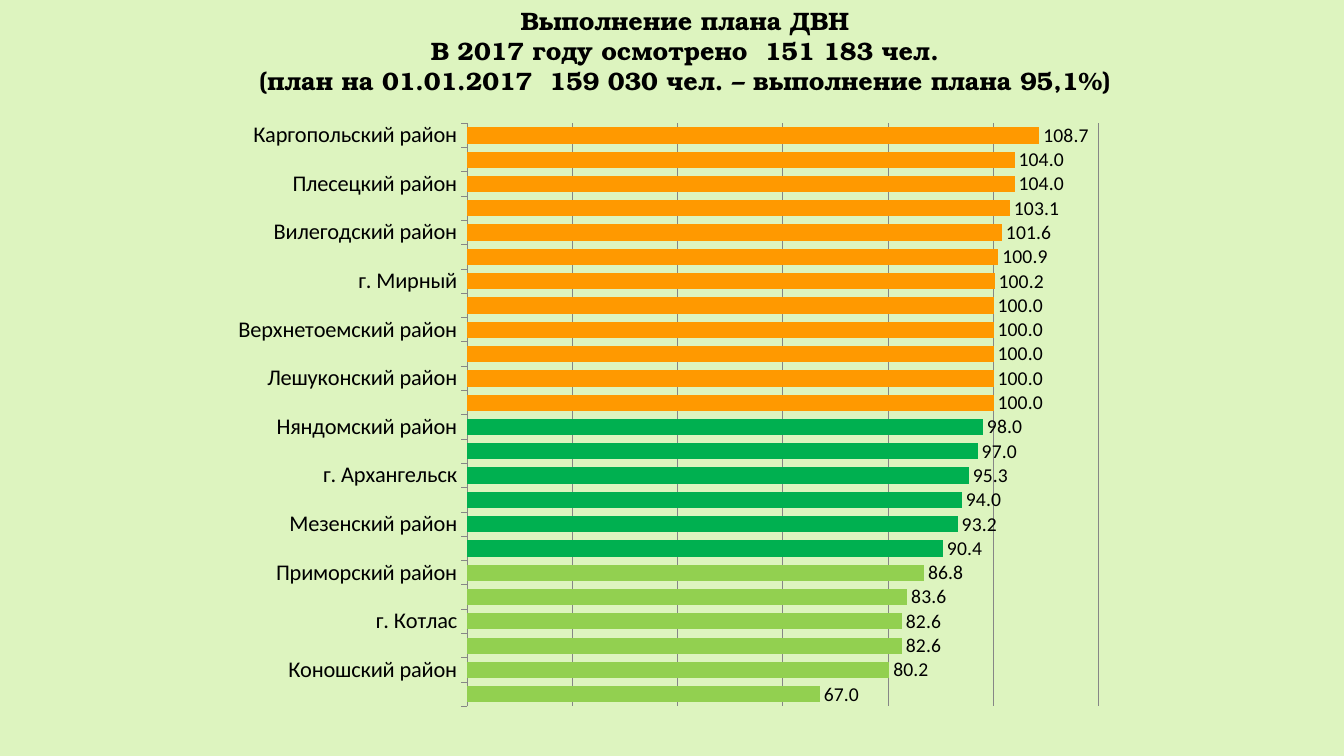
from dataclasses import dataclass

from lxml import etree
from pptx import Presentation
from pptx import util as u
from pptx.chart.data import CategoryChartData
from pptx.dml.color import RGBColor
from pptx.enum import chart as ch
from pptx.enum import text

COLORS = {
    "background": "DDF4BF",
    "text": "000000",
    "axis": "868686",
    "achieved": "FF9900",
    "close": "00B050",
    "behind": "92D050",
}
HEADING_FONT = "TeX Gyre Bonum"
CHART_FONT = "Calibri"
CHART_NS = "http://schemas.openxmlformats.org/drawingml/2006/chart"

HEADING = (
    "Выполнение плана ДВН",
    "В 2017 году осмотрено  151 183 чел.",
    "(план на 01.01.2017  159 030 чел. – выполнение плана 95,1%)",
)


@dataclass(frozen=True)
class District:
    percent: float
    name: str = ""

    @property
    def color(self) -> str:
        if self.percent >= 100:
            return COLORS["achieved"]
        return COLORS["close"] if self.percent >= 90 else COLORS["behind"]


DISTRICTS = [
    District(108.7, "Каргопольский район"),
    District(104),
    District(104, "Плесецкий район"),
    District(103.1),
    District(101.6, "Вилегодский район"),
    District(100.9),
    District(100.2, "г. Мирный"),
    District(100),
    District(100, "Верхнетоемский район"),
    District(100),
    District(100, "Лешуконский район"),
    District(100),
    District(98, "Няндомский район"),
    District(97),
    District(95.3, "г. Архангельск"),
    District(94),
    District(93.2, "Мезенский район"),
    District(90.4),
    District(86.8, "Приморский район"),
    District(83.6),
    District(82.6, "г. Котлас"),
    District(82.6),
    District(80.2, "Коношский район"),
    District(67),
]


def style_font(font, name: str, size: float, bold: bool = False) -> None:
    font.name = name
    font.size = u.Pt(size)
    font.bold = bold
    font.color.rgb = RGBColor.from_string(COLORS["text"])


def style_line(line) -> None:
    line.color.rgb = RGBColor.from_string(COLORS["axis"])
    line.width = u.Pt(0.75)


def place_plot(chart, x: float, y: float, w: float, h: float) -> None:
    plot_area = chart._chartSpace.find(f".//{{{CHART_NS}}}plotArea")
    for old_layout in plot_area.findall(f"{{{CHART_NS}}}layout"):
        plot_area.remove(old_layout)
    layout = etree.Element(f"{{{CHART_NS}}}layout")
    manual = etree.SubElement(layout, f"{{{CHART_NS}}}manualLayout")
    settings = {"layoutTarget": "inner", "xMode": "edge", "yMode": "edge",
                "x": x, "y": y, "w": w, "h": h}
    for tag, value in settings.items():
        etree.SubElement(manual, f"{{{CHART_NS}}}{tag}", val=str(value))
    plot_area.insert(0, layout)


def add_heading(slide) -> None:
    heading = slide.shapes.add_textbox(u.Pt(18.72), 0, u.Pt(941.04), u.Pt(72.72)).text_frame
    heading.word_wrap = True
    heading.text = "\n".join(HEADING)
    for paragraph in heading.paragraphs:
        paragraph.alignment = text.PP_ALIGN.CENTER
        style_font(paragraph.font, HEADING_FONT, 18, bold=True)


def add_completion_chart(slide) -> None:
    completion = CategoryChartData(number_format="0.0")
    completion.categories = [district.name for district in DISTRICTS]
    completion.add_series("", [district.percent for district in DISTRICTS])
    chart = slide.shapes.add_chart(
        ch.XL_CHART_TYPE.BAR_CLUSTERED,
        u.Pt(157.68), u.Pt(78.48), u.Pt(640.08), u.Pt(434.88), completion,
    ).chart
    chart.has_legend = False
    chart.has_title = False
    style_font(chart.font, CHART_FONT, 18)
    place_plot(chart, 0.275, 0.022, 0.705, 0.958)

    names = chart.category_axis
    names.reverse_order = True
    names.major_tick_mark = ch.XL_TICK_MARK.OUTSIDE
    style_font(names.tick_labels.font, CHART_FONT, 16)
    style_line(names.format.line)

    percents = chart.value_axis
    percents.visible = False
    percents.minimum_scale = 0
    percents.maximum_scale = 120
    percents.major_unit = 20
    percents.has_major_gridlines = True
    style_line(percents.major_gridlines.format.line)

    plot = chart.plots[0]
    plot.gap_width = 50
    plot.vary_by_categories = False
    plot.has_data_labels = True
    labels = plot.data_labels
    labels.show_value = True
    labels.number_format = "0.0"
    labels.number_format_is_linked = False
    labels.position = ch.XL_LABEL_POSITION.OUTSIDE_END
    style_font(labels.font, CHART_FONT, 14)

    bars = plot.series[0]
    bars.invert_if_negative = False
    for index, district in enumerate(DISTRICTS):
        fill = bars.points[index].format.fill
        fill.solid()
        fill.fore_color.rgb = RGBColor.from_string(district.color)


def main() -> None:
    deck = Presentation()
    deck.slide_width = u.Pt(960)
    deck.slide_height = u.Pt(540)
    slide = deck.slides.add_slide(deck.slide_layouts[6])
    slide.background.fill.solid()
    slide.background.fill.fore_color.rgb = RGBColor.from_string(COLORS["background"])
    add_completion_chart(slide)
    add_heading(slide)
    deck.save("out.pptx")


if __name__ == "__main__":
    main()
